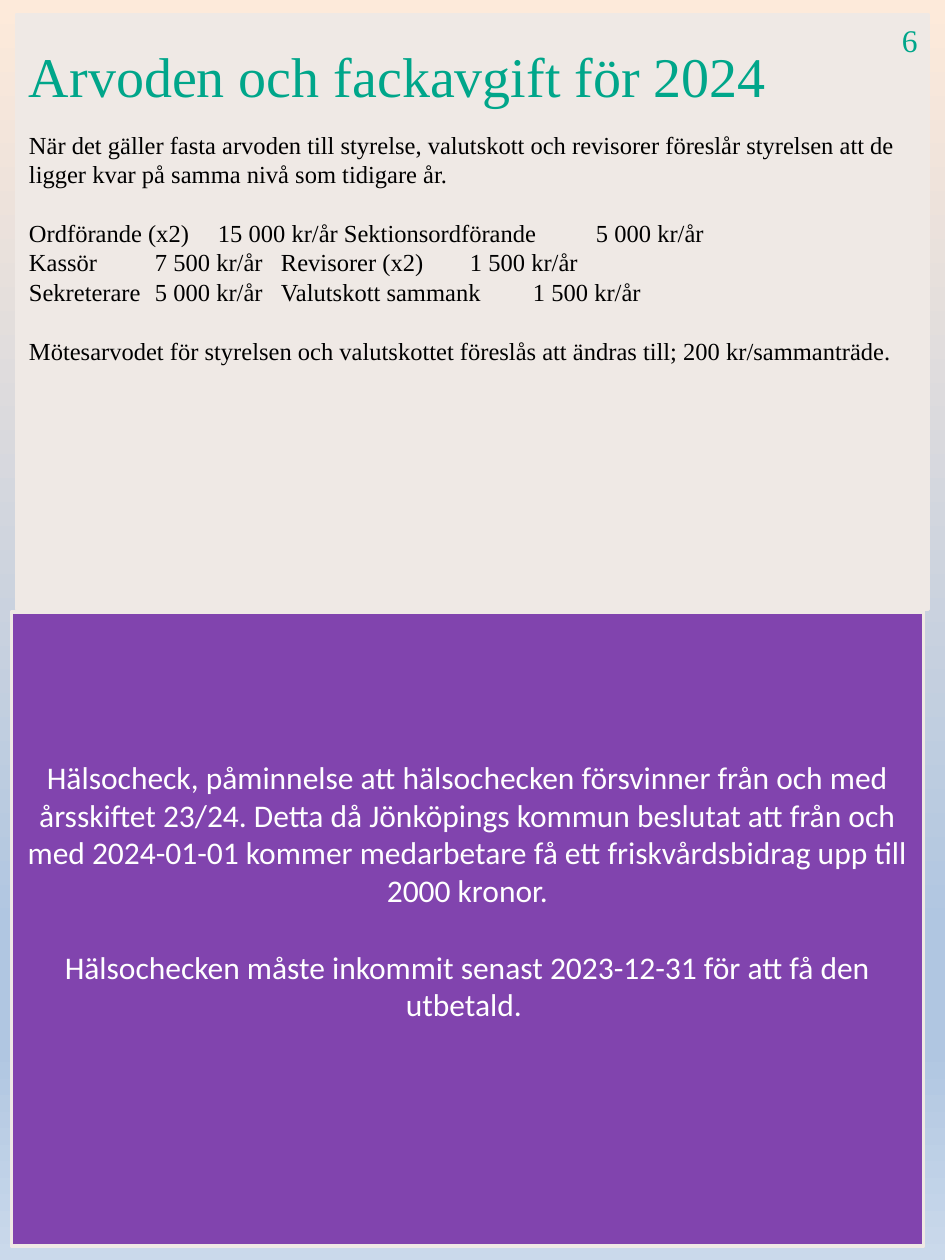
"""Build the fee and wellness page of a union newsletter."""
from dataclasses import dataclass

from lxml import etree
from pptx import Presentation
from pptx import util as u
from pptx.dml import color
from pptx.enum import shapes, text
from pptx.oxml import ns

COLORS = {
    "panel": "EFE9E5",
    "notice": "8144AE",
    "accent": "00A68A",
    "ink": "000000",
    "white": "FFFFFF",
}
BACKGROUND_STOPS = [(0, "FDEADA"), (74, "B0C6E1"), (83, "B0C6E1"), (100, "CAD9EB")]
SERIF, SANS = "Times New Roman", "Calibri"
BODY_LINE, NOTICE_LINE = 16.8, 22
TAB_GAP = u.Cm(5.08)


@dataclass(frozen=True)
class Area:
    left: float
    top: float
    width: float
    height: float


@dataclass(frozen=True)
class Style:
    font: str
    size: float
    color: str
    align: text.PP_ALIGN = text.PP_ALIGN.LEFT


@dataclass(frozen=True)
class Line:
    words: str
    gap: float = 0


TITLE_STYLE = Style(SERIF, 32, "accent")
NUMBER_STYLE = Style(SERIF, 18, "accent")
BODY_STYLE = Style(SERIF, 14, "ink")
NOTICE_STYLE = Style(SANS, 18, "white", text.PP_ALIGN.CENTER)

FEES = [
    ("Ordförande (x2)", "15 000 kr/år", "Sektionsordförande", "5 000 kr/år"),
    ("Kassör", "7 500 kr/år", "Revisorer (x2)", "1 500 kr/år"),
    ("Sekreterare", "5 000 kr/år", "Valutskott sammank", "1 500 kr/år"),
]
BODY = [
    Line("När det gäller fasta arvoden till styrelse, valutskott och revisorer "
         "föreslår styrelsen att de ligger kvar på samma nivå som tidigare år."),
    *[Line("\t".join(fee), 0 if index else BODY_LINE) for index, fee in enumerate(FEES)],
    Line("Mötesarvodet för styrelsen och valutskottet föreslås att ändras till; "
         "200 kr/sammanträde.", BODY_LINE),
]
NOTICE = [
    Line("Hälsocheck, påminnelse att hälsochecken försvinner från och med årsskiftet "
         "23/24. Detta då Jönköpings kommun beslutat att från och med 2024-01-01 kommer "
         "medarbetare få ett friskvårdsbidrag upp till 2000 kronor."),
    Line("Hälsochecken måste inkommit senast 2023-12-31 för att få den utbetald. ",
         NOTICE_LINE),
]


def rgb(name: str) -> color.RGBColor:
    return color.RGBColor.from_string(COLORS[name])


def paint_background(page) -> None:
    fill = page.background.fill
    fill.gradient()
    fill.gradient_angle = 270
    stops = page.element.find(".//" + ns.qn("a:gsLst"))
    for stop in list(stops):
        stops.remove(stop)
    for percent, value in BACKGROUND_STOPS:
        stop = etree.SubElement(stops, ns.qn("a:gs"), pos=str(percent * 1000))
        etree.SubElement(stop, ns.qn("a:srgbClr"), val=value)


def write(box, lines: list[Line], style: Style) -> None:
    frame = box.text_frame
    frame.word_wrap = True
    frame.auto_size = text.MSO_AUTO_SIZE.NONE
    for index, line in enumerate(lines):
        para = frame.add_paragraph() if index else frame.paragraphs[0]
        para.text = line.words
        para.alignment = style.align
        para.space_before = u.Pt(line.gap)
        para.font.name = style.font
        para.font.size = u.Pt(style.size)
        para.font.color.rgb = rgb(style.color)


def place(box, area: Area) -> None:
    box.left, box.top = u.Cm(area.left), u.Cm(area.top)
    box.width, box.height = u.Cm(area.width), u.Cm(area.height)
    box.element.getparent().append(box.element)


def add_panel(page, area: Area, fill: str):
    panel = page.shapes.add_shape(shapes.MSO_SHAPE.RECTANGLE, 0, 0, 0, 0)
    place(panel, area)
    panel.shadow.inherit = False
    panel.fill.solid()
    panel.fill.fore_color.rgb = rgb(fill)
    panel.line.color.rgb = rgb("panel")
    panel.line.width = u.Pt(2)
    return panel


def set_columns(box) -> None:
    for para in box.text_frame.paragraphs:
        para.line_spacing = u.Pt(BODY_LINE)
        properties = para._p.get_or_add_pPr()
        properties.set("marL", "0")
        properties.set("indent", "0")
        bullet = etree.Element(ns.qn("a:buNone"))
        tabs = etree.Element(ns.qn("a:tabLst"))
        for column in (1, 2, 3):
            etree.SubElement(tabs, ns.qn("a:tab"), pos=str(TAB_GAP * column), algn="l")
        defaults = properties.find(ns.qn("a:defRPr"))
        defaults.addprevious(bullet)
        defaults.addprevious(tabs)


def main() -> None:
    deck = Presentation()
    deck.slide_width, deck.slide_height = u.Cm(19.05), u.Cm(25.4)
    page = deck.slides.add_slide(deck.slide_layouts[1])
    title, body = page.placeholders
    paint_background(page)

    add_panel(page, Area(0.33, 0.3, 18.39, 11.99), "panel")
    place(title, Area(0.33, 0.71, 16.79, 1.63))
    write(title, [Line("Arvoden och fackavgift för 2024")], TITLE_STYLE)
    title.text_frame.vertical_anchor = text.MSO_ANCHOR.TOP

    notice = add_panel(page, Area(0.23, 12.34, 18.39, 12.78), "notice")
    write(notice, NOTICE, NOTICE_STYLE)
    notice.text_frame.vertical_anchor = text.MSO_ANCHOR.MIDDLE
    notice.text_frame.margin_bottom = u.Cm(1.68)

    place(body, Area(0.33, 2.49, 18.21, 6.25))
    write(body, BODY, BODY_STYLE)
    set_columns(body)

    number = page.shapes.add_textbox(0, 0, 0, 0)
    place(number, Area(17.93, 0.3, 0.79, 1.02))
    write(number, [Line("6")], NUMBER_STYLE)

    deck.save("out.pptx")


if __name__ == "__main__":
    main()
